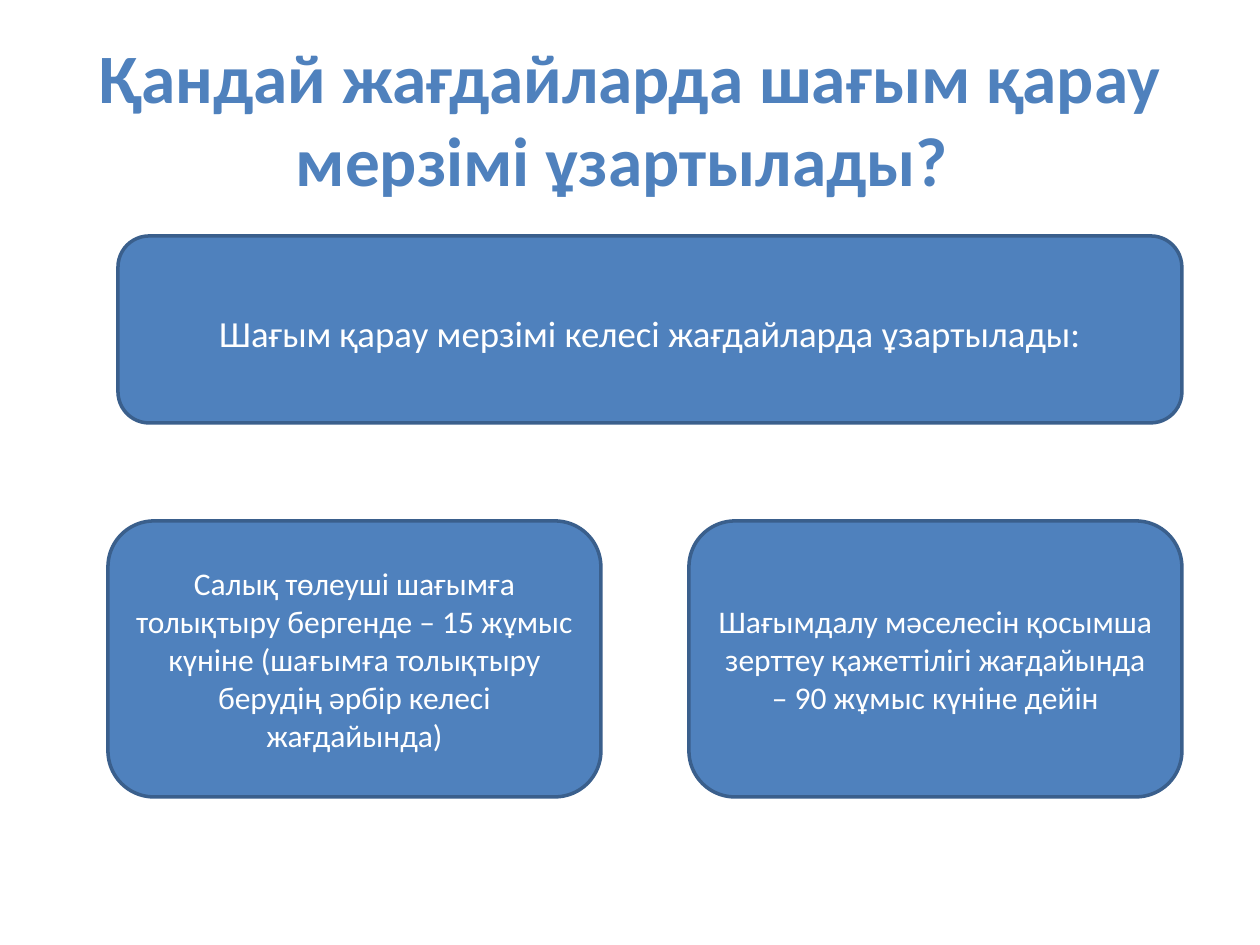
from pptx import Presentation
from pptx import util as u
from pptx.dml.color import RGBColor
from pptx.enum import shapes, text

PX = u.Inches(1) // 126
BLUE = RGBColor(0x4F, 0x81, 0xBD)
DARK_BLUE = RGBColor(0x3A, 0x5F, 0x8C)
WHITE = RGBColor(0xFF, 0xFF, 0xFF)

deck = Presentation()
deck.slide_width, deck.slide_height = 1260 * PX, 945 * PX
slide = deck.slides.add_slide(deck.slide_layouts[6])


def write(frame, words, size, color, bold=False):
    frame.word_wrap = True
    frame.vertical_anchor = text.MSO_ANCHOR.MIDDLE
    paragraph = frame.paragraphs[0]
    paragraph.alignment = text.PP_ALIGN.CENTER
    run = paragraph.add_run()
    run.text = words
    run.font.name = "Calibri"
    run.font.size = u.Pt(size)
    run.font.bold = bold
    run.font.color.rgb = color


title = slide.shapes.add_textbox(63 * PX, 38 * PX, 1134 * PX, 158 * PX)
write(title.text_frame, "Қандай жағдайларда шағым қарау мерзімі ұзартылады? ",
      39.6, BLUE, bold=True)

# left, top, width, height, top inset, text size, wording
boxes = [
    (108, 521, 493, 276, 6, 18,
     "Салық төлеуші шағымға толықтыру бергенде – 15 жұмыс күніне "
     "(шағымға толықтыру берудің әрбір келесі жағдайында)"),
    (689, 521, 493, 276, 6, 18,
     "Шағымдалу мәселесін қосымша зерттеу қажеттілігі жағдайында "
     "– 90 жұмыс күніне дейін"),
    (118, 236, 1064, 187, 12, 21,
     "Шағым қарау мерзімі келесі жағдайларда ұзартылады:"),
]
for left, top, width, height, inset, size, words in boxes:
    box = slide.shapes.add_shape(
        shapes.MSO_SHAPE.FLOWCHART_ALTERNATE_PROCESS,
        left * PX, top * PX, width * PX, height * PX)
    box.shadow.inherit = False
    box.fill.solid()
    box.fill.fore_color.rgb = BLUE
    box.line.color.rgb = DARK_BLUE
    box.line.width = u.Pt(2)
    box.text_frame.margin_top = inset * PX
    write(box.text_frame, words, size, WHITE)

deck.save("out.pptx")
